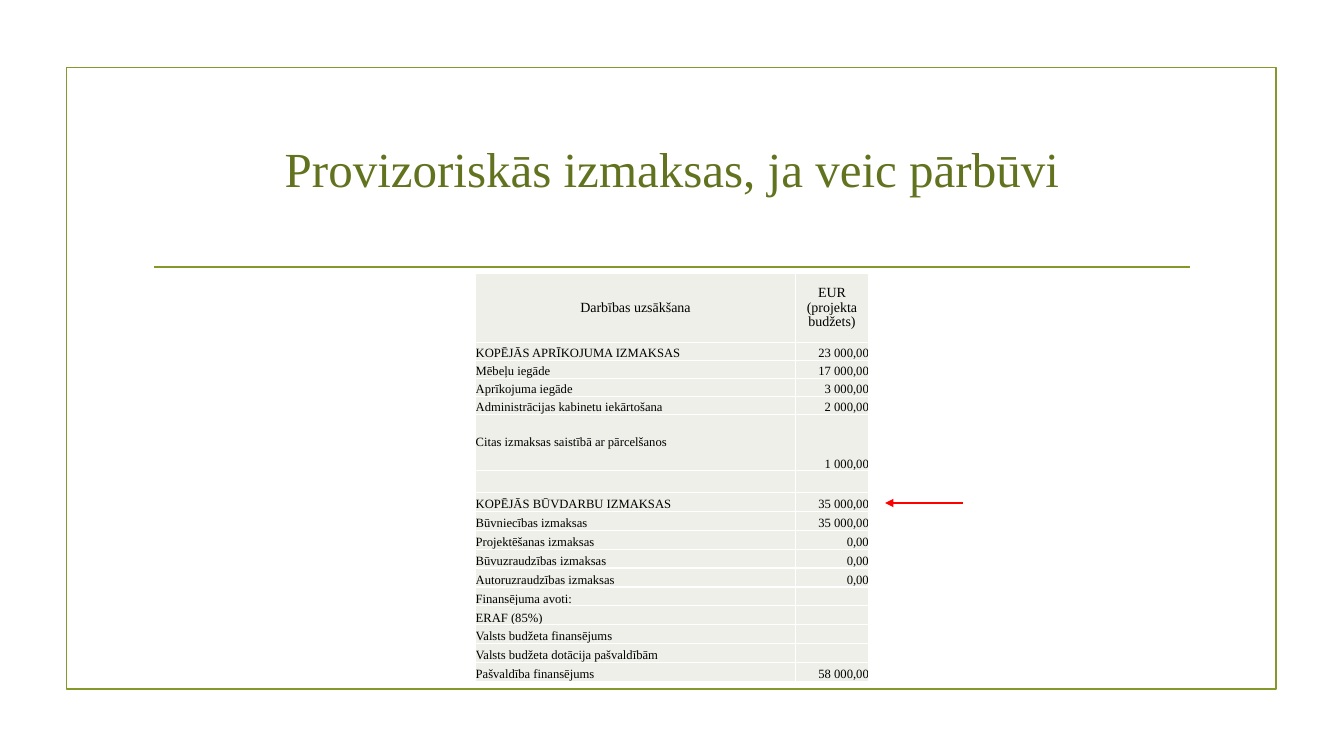
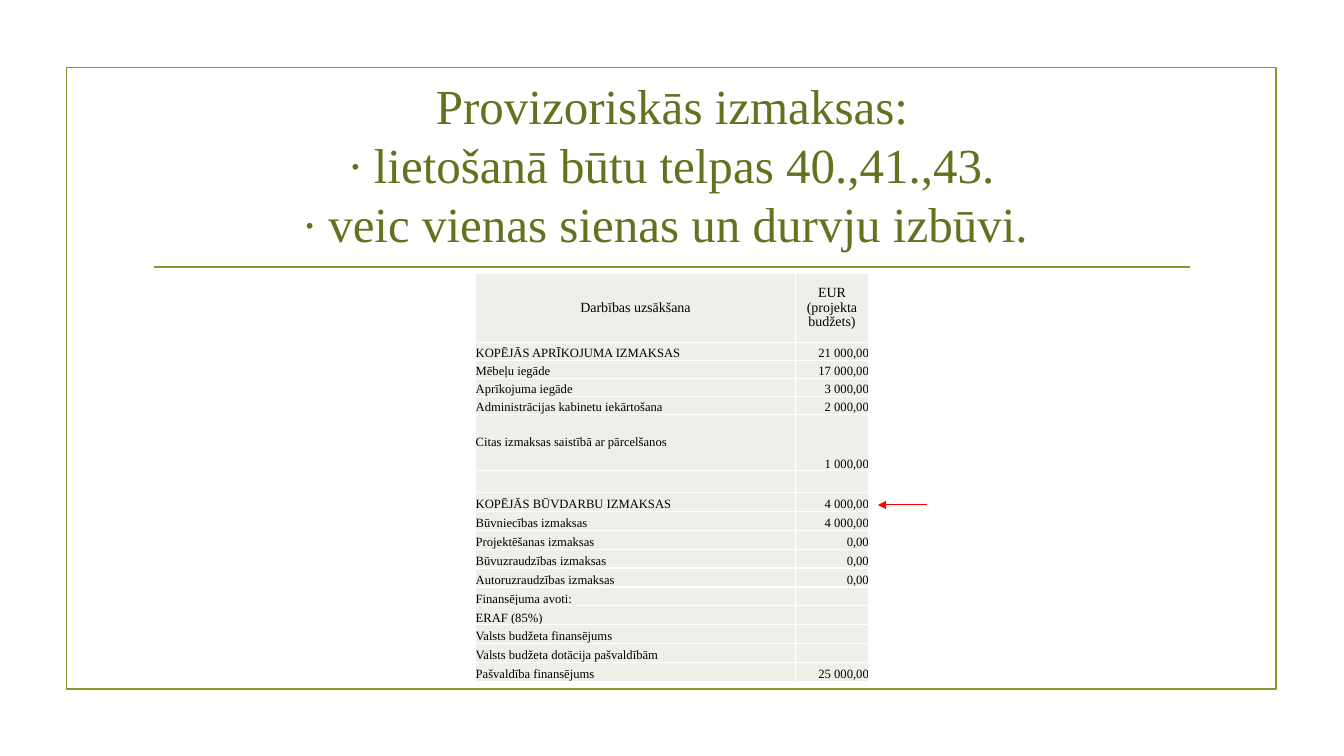
"""Builds two slides that compare provisional costs of a rebuilding project."""
from lxml import etree
from pptx import Presentation
from pptx import util as u
from pptx.dml.color import RGBColor
from pptx.enum import shapes, text
from pptx.oxml import ns

Pt = u.Pt
FONT = "Times New Roman"
GREEN, TITLE_GREEN, PALE, WHITE, RED, BLACK = (
    "83992A", "62731F", "EDEFE8", "FFFFFF", "FF0000", "000000")

HEADER = ("Darbības uzsākšana", "EUR (projekta budžets)")
COST_ITEMS = [
    "KOPĒJĀS APRĪKOJUMA IZMAKSAS",
    "Mēbeļu iegāde",
    "Aprīkojuma iegāde",
    "Administrācijas kabinetu iekārtošana",
    "Citas izmaksas saistībā ar pārcelšanos",
    "",
    "KOPĒJĀS BŪVDARBU IZMAKSAS",
    "Būvniecības izmaksas",
    "Projektēšanas izmaksas",
    "Būvuzraudzības izmaksas",
    "Autoruzraudzības izmaksas",
    "Finansējuma avoti:",
    "ERAF (85%)",
    "Valsts budžeta finansējums",
    "Valsts budžeta dotācija pašvaldībām",
    "Pašvaldība finansējums",
]
RELOCATION = "Citas izmaksas saistībā ar pārcelšanos"
COLUMN_WIDTHS = (228.2, 52.6)
ROW_HEIGHTS = [49.7] + [12.8] * 4 + [40.4, 15.5] + [13.5] * 10

SCENARIOS = [
    {
        "title": ["Provizoriskās izmaksas, ja veic pārbūvi"],
        "title_top": 68.4,
        "equipment": "23 000,00",
        "construction": "35 000,00",
        "municipality": "58 000,00",
        "arrow": (687.6, 632.2, 359.3),
    },
    {
        "title": ["Provizoriskās izmaksas:",
                  "∙ lietošanā būtu telpas 40.,41.,43.",
                  "∙ veic vienas sienas un durvju izbūvi. "],
        "title_top": 65.5,
        "equipment": "21 000,00",
        "construction": "4 000,00",
        "municipality": "25 000,00",
        "arrow": (662.4, 627.1, 360.7),
    },
]


def rgb(value):
    return RGBColor.from_string(value)


def add_run(paragraph, wording, size, color):
    run = paragraph.add_run()
    run.text = wording
    run.font.name, run.font.size = FONT, Pt(size)
    run.font.color.rgb = rgb(color)


def add_line(slide, start, end, color, width):
    line = slide.shapes.add_connector(
        shapes.MSO_CONNECTOR.STRAIGHT, *map(Pt, start + end))
    line.line.color.rgb, line.line.width = rgb(color), Pt(width)
    etree.SubElement(line.element.spPr, ns.qn("a:effectLst"))
    return line


def add_frame(slide, layout):
    for placeholder in list(layout.placeholders):
        if placeholder.placeholder_format.idx:
            layout.shapes.element.remove(placeholder.element)
    frame = slide.shapes.add_shape(
        shapes.MSO_SHAPE.RECTANGLE, Pt(47.5), Pt(48.2), Pt(864), Pt(444.2))
    frame.shadow.inherit = False
    frame.fill.background()
    frame.line.color.rgb, frame.line.width = rgb(GREEN), Pt(1.25)
    rule = add_line(slide, (110.2, 190.8), (850.3, 190.8), GREEN, 1.25)
    for part in (frame, rule):
        layout.shapes.element.append(part.element)


def fill_title(title, lines, top):
    title.left, title.top, title.width, title.height = map(
        Pt, (102.2, top, 756, 103))
    frame = title.text_frame
    frame.auto_size = text.MSO_AUTO_SIZE.NONE
    frame.vertical_anchor = text.MSO_ANCHOR.MIDDLE
    paragraph = frame.paragraphs[0]
    paragraph.alignment = text.PP_ALIGN.CENTER
    for index, line in enumerate(lines):
        if index:
            paragraph.add_line_break()
        add_run(paragraph, line, 35, TITLE_GREEN)


def border_cell(cell):
    properties = cell._tc.get_or_add_tcPr()
    for index, side in enumerate(("lnL", "lnR", "lnT", "lnB")):
        border = etree.Element(ns.qn(f"a:{side}"), w=str(Pt(1)))
        paint = etree.SubElement(border, ns.qn("a:solidFill"))
        etree.SubElement(paint, ns.qn("a:srgbClr"), val=WHITE)
        properties.insert(index, border)


def fill_cell(cell, wording, size, alignment, anchor):
    cell.margin_left = cell.margin_right = 0
    cell.margin_top = cell.margin_bottom = 0
    cell.vertical_anchor = anchor
    cell.fill.solid()
    cell.fill.fore_color.rgb = rgb(PALE)
    border_cell(cell)
    paragraph = cell.text_frame.paragraphs[0]
    paragraph.alignment = alignment
    if wording:
        add_run(paragraph, wording, size, BLACK)
    else:
        etree.SubElement(paragraph._p, ns.qn("a:endParaRPr"), sz=str(size * 100))


def add_costs(slide, scenario):
    construction = scenario["construction"]
    amounts = [scenario["equipment"], "17 000,00", "3 000,00", "2 000,00",
               "1 000,00", "", construction, construction,
               "0,00", "0,00", "0,00", "", "", "", "",
               scenario["municipality"]]
    rows = [HEADER, *zip(COST_ITEMS, amounts)]
    costs = slide.shapes.add_table(
        len(rows), 2, Pt(339.8), Pt(195.1),
        Pt(sum(COLUMN_WIDTHS)), Pt(sum(ROW_HEIGHTS))).table
    costs.first_row = costs.horz_banding = False
    for column, width in zip(costs.columns, COLUMN_WIDTHS):
        column.width = Pt(width)
    align, anchors = text.PP_ALIGN, text.MSO_ANCHOR
    for r, (row, height) in enumerate(zip(rows, ROW_HEIGHTS)):
        costs.rows[r].height = Pt(height)
        for c, wording in enumerate(row):
            cell = costs.cell(r, c)
            if r == 0:
                fill_cell(cell, wording, 10, align.CENTER, anchors.MIDDLE)
                cell.text_frame.paragraphs[0].line_spacing = 0.93
            else:
                anchor = anchors.MIDDLE if wording == RELOCATION else anchors.BOTTOM
                fill_cell(cell, wording, 9, (align.LEFT, align.RIGHT)[c], anchor)


def add_arrow(slide, start, end, y):
    arrow = add_line(slide, (start, y), (end, y), RED, 0.75)
    etree.SubElement(arrow.line._get_or_add_ln(), ns.qn("a:tailEnd"), type="triangle")


def main():
    deck = Presentation()
    deck.slide_width, deck.slide_height = Pt(960), Pt(540)
    layout = deck.slide_layouts[5]
    for index, scenario in enumerate(SCENARIOS):
        slide = deck.slides.add_slide(layout)
        if index == 0:
            add_frame(slide, layout)
        fill_title(slide.shapes.title, scenario["title"], scenario["title_top"])
        add_costs(slide, scenario)
        add_arrow(slide, *scenario["arrow"])
    deck.save("out.pptx")


if __name__ == "__main__":
    main()
